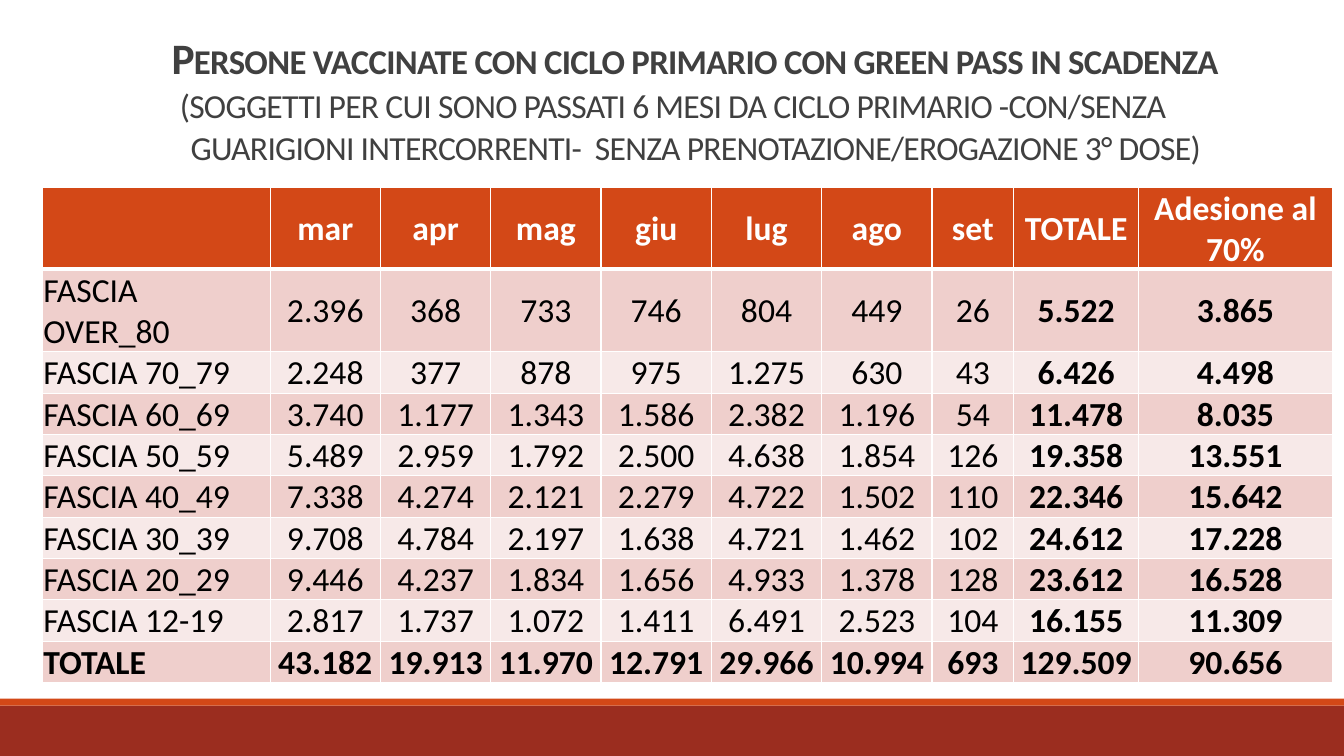
"""Build the slide on vaccinated people whose green pass is about to expire."""
from dataclasses import dataclass

from lxml import etree
from pptx import Presentation
from pptx.dml.color import RGBColor
from pptx.enum.shapes import MSO_SHAPE
from pptx.enum.text import MSO_ANCHOR, PP_ALIGN
from pptx.oxml.ns import qn
from pptx.util import Inches, Pt

RECTANGLE = MSO_SHAPE.RECTANGLE
LEFT, CENTER = PP_ALIGN.LEFT, PP_ALIGN.CENTER
MIDDLE, BOTTOM = MSO_ANCHOR.MIDDLE, MSO_ANCHOR.BOTTOM

HEADINGS = ["", "mar", "apr", "mag", "giu", "lug", "ago", "set", "TOTALE", "Adesione al 70%"]
AGE_GROUPS = [
    ["FASCIA OVER_80", "2.396", "368", "733", "746", "804", "449", "26", "5.522", "3.865"],
    ["FASCIA 70_79", "2.248", "377", "878", "975", "1.275", "630", "43", "6.426", "4.498"],
    ["FASCIA 60_69", "3.740", "1.177", "1.343", "1.586", "2.382", "1.196", "54", "11.478", "8.035"],
    ["FASCIA 50_59", "5.489", "2.959", "1.792", "2.500", "4.638", "1.854", "126", "19.358", "13.551"],
    ["FASCIA 40_49", "7.338", "4.274", "2.121", "2.279", "4.722", "1.502", "110", "22.346", "15.642"],
    ["FASCIA 30_39", "9.708", "4.784", "2.197", "1.638", "4.721", "1.462", "102", "24.612", "17.228"],
    ["FASCIA 20_29", "9.446", "4.237", "1.834", "1.656", "4.933", "1.378", "128", "23.612", "16.528"],
    ["FASCIA 12-19", "2.817", "1.737", "1.072", "1.411", "6.491", "2.523", "104", "16.155", "11.309"],
]
TOTALS = ["TOTALE", "43.182", "19.913", "11.970", "12.791", "29.966", "10.994", "693", "129.509", "90.656"]
COLUMN_PERCENTS = [16.95] + [8.21] * 6 + [6.08, 9.3, 14.4]
ROW_PERCENTS = [10.8, 10.93] + [5.47] * 8


@dataclass(frozen=True)
class Theme:
    font: str = "Calibri"
    heading_size: float = 31
    subtitle_size: float = 30
    table_size: float = 24
    heading: str = "404040"
    body: str = "000000"
    white: str = "FFFFFF"
    accent: str = "D34817"
    footer: str = "9B2D1F"
    bands: tuple = ("EFCFCC", "F7E9E8")
    thin: float = 1
    thick: float = 3


def write(paragraph, text, *, font, size, color, bold=False, small_caps=False, spacing=0):
    run = paragraph.add_run()
    run.text = text
    run.font.name = font
    run.font.size = Pt(size)
    run.font.bold = bold
    run.font.color.rgb = RGBColor.from_string(color)
    properties = run.font._element
    if small_caps:
        properties.set("cap", "small")
    if spacing:
        properties.set("spc", str(int(spacing * 100)))


class SlideBuilder:
    def __init__(self, presentation, theme):
        self.theme = theme
        self.width, self.height = presentation.slide_width, presentation.slide_height
        self.slide = presentation.slides.add_slide(presentation.slide_layouts[6])

    def across(self, percent):
        return round(self.width * percent / 100)

    def down(self, percent):
        return round(self.height * percent / 100)

    def box(self, left, top, width, height):
        return self.across(left), self.down(top), self.across(width), self.down(height)

    def bar(self, top, height, color):
        shape = self.slide.shapes.add_shape(RECTANGLE, *self.box(0, top, 100, height))
        shape.shadow.inherit = False
        shape.fill.solid()
        shape.fill.fore_color.rgb = RGBColor.from_string(color)
        shape.line.fill.background()

    def title(self, heading, subtitle, *place):
        frame = self.slide.shapes.add_textbox(*self.box(*place)).text_frame
        frame.word_wrap = True
        frame.vertical_anchor = BOTTOM
        paragraph = frame.paragraphs[0]
        paragraph.alignment = CENTER
        paragraph.line_spacing = 0.85
        style = dict(font=self.theme.font, color=self.theme.heading, small_caps=True, spacing=-0.5)
        write(paragraph, heading, size=self.theme.heading_size, bold=True, **style)
        paragraph.add_line_break()
        write(paragraph, subtitle, size=self.theme.subtitle_size, **style)

    def borders(self, cell, top, bottom):
        properties = cell._tc.get_or_add_tcPr()
        widths = {"L": self.theme.thin, "R": self.theme.thin, "T": top, "B": bottom}
        for side, width in widths.items():
            line = etree.SubElement(properties, qn(f"a:ln{side}"), w=str(Pt(width)))
            fill = etree.SubElement(line, qn("a:solidFill"))
            etree.SubElement(fill, qn("a:srgbClr"), val=self.theme.white)

    def cell(self, cell, text, *, fill, color, bold, alignment, top, bottom):
        self.borders(cell, top, bottom)
        cell.fill.solid()
        cell.fill.fore_color.rgb = RGBColor.from_string(fill)
        cell.vertical_anchor = MIDDLE
        cell.margin_left = cell.margin_right = cell.margin_top = Inches(0.01)
        cell.margin_bottom = 0
        paragraph = cell.text_frame.paragraphs[0]
        paragraph.alignment = alignment
        if text:
            write(paragraph, text, font=self.theme.font, size=self.theme.table_size, color=color, bold=bold)

    def table(self, rows, left, top, column_percents, row_percents):
        theme = self.theme
        place = self.box(left, top, sum(column_percents), sum(row_percents))
        table = self.slide.shapes.add_table(len(rows), len(column_percents), *place).table
        table.horz_banding = False
        for column, percent in zip(table.columns, column_percents):
            column.width = self.across(percent)
        for row, percent in zip(table.rows, row_percents):
            row.height = self.down(percent)
        for row_index, values in enumerate(rows):
            is_header = row_index == 0
            is_total = row_index == len(rows) - 1
            for column_index, text in enumerate(values):
                self.cell(
                    table.cell(row_index, column_index),
                    text,
                    fill=theme.accent if is_header else theme.bands[(row_index - 1) % 2],
                    color=theme.white if is_header else theme.body,
                    bold=is_header or is_total or column_index >= len(values) - 2,
                    alignment=LEFT if column_index == 0 else CENTER,
                    top=theme.thick if row_index == 1 else theme.thin,
                    bottom=theme.thick if is_header else theme.thin,
                )


def main():
    presentation = Presentation()
    presentation.slide_width, presentation.slide_height = Inches(13.33), Inches(7.5)
    theme = Theme()
    builder = SlideBuilder(presentation, theme)
    builder.bar(93.33, 6.67, theme.footer)
    builder.bar(92.4, 0.93, theme.accent)
    builder.title(
        "Persone vaccinate con ciclo primario con green pass in scadenza",
        "(soggetti per cui sono passati 6 mesi da ciclo primario -con/senza "
        "guarigioni intercorrenti-  senza prenotazione/erogazione 3° dose)",
        8.78, 1.87, 82.52, 21.2,
    )
    builder.table([HEADINGS, *AGE_GROUPS, TOTALS], 3.15, 24.8, COLUMN_PERCENTS, ROW_PERCENTS)
    presentation.save("out.pptx")


if __name__ == "__main__":
    main()
